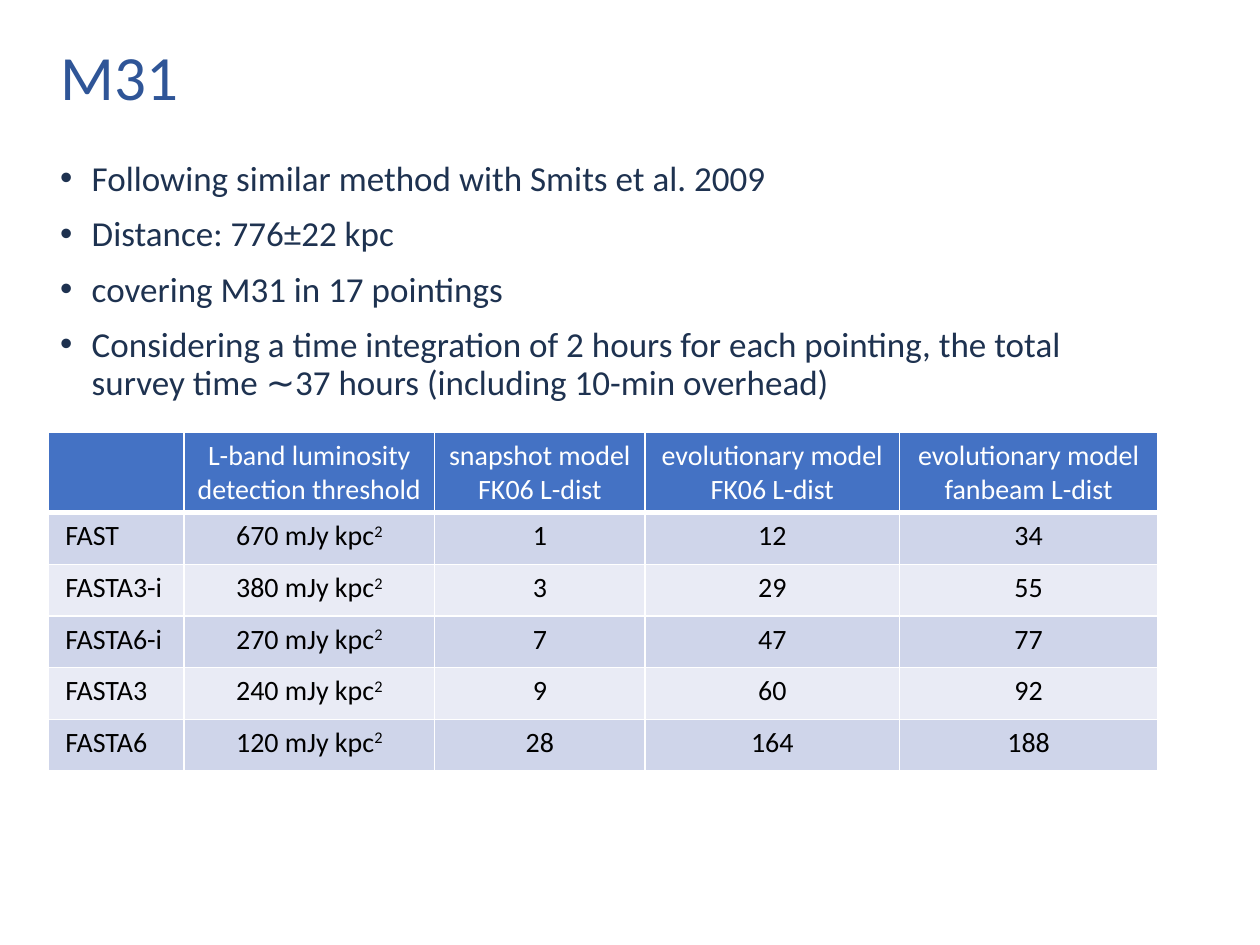
from dataclasses import dataclass

from lxml import etree
from pptx import Presentation
from pptx.dml.color import RGBColor
from pptx.enum.text import MSO_ANCHOR, PP_ALIGN
from pptx.oxml.ns import qn
from pptx.util import Inches, Pt

LEFT, CENTER = PP_ALIGN.LEFT, PP_ALIGN.CENTER
MIDDLE = MSO_ANCHOR.MIDDLE
TITLE_ONLY = 5


@dataclass(frozen=True)
class Theme:
    font: str = "Calibri"
    title: str = "2F5597"
    body: str = "1E3250"
    header_text: str = "FFFFFF"
    cell_text: str = "000000"
    header_fill: str = "4472C4"
    bands: tuple = ("CFD5EA", "E9EBF5")
    border: str = "FFFFFF"
    title_size: int = 36
    body_size: int = 20
    table_size: int = 16


THEME = Theme()

BULLETS = [
    "Following similar method with Smits et al. 2009",
    "Distance: 776±22 kpc",
    "covering M31 in 17 pointings",
    "Considering a time integration of 2 hours for each pointing, the total "
    "survey time ∼37 hours (including 10-min overhead)",
]
HEADERS = [
    "",
    "L-band luminosity detection threshold",
    "snapshot model FK06 L-dist",
    "evolutionary model FK06 L-dist",
    "evolutionary model fanbeam L-dist",
]
# Telescope, threshold in mJy kpc², then detections for each model
SURVEYS = [
    ("FAST", 670, 1, 12, 34),
    ("FASTA3-i", 380, 3, 29, 55),
    ("FASTA6-i", 270, 7, 47, 77),
    ("FASTA3", 240, 9, 60, 92),
    ("FASTA6", 120, 28, 164, 188),
]
COLUMN_WIDTHS = [1.08, 1.99, 1.67, 2.02, 2.05]
HEADER_HEIGHT, ROW_HEIGHT = 0.64, 0.41


def format_runs(paragraph, size, color):
    for run in paragraph.runs:
        run.font.name = THEME.font
        run.font.size = Pt(size)
        run.font.color.rgb = RGBColor.from_string(color)


def place(shape, box):
    shape.left, shape.top, shape.width, shape.height = map(Inches, box)


def add_title(slide, box, text):
    title = slide.shapes.title
    place(title, box)
    frame = title.text_frame
    frame.text = text
    frame.vertical_anchor = MIDDLE
    paragraph = frame.paragraphs[0]
    paragraph.alignment = LEFT
    paragraph.line_spacing = 0.9
    format_runs(paragraph, THEME.title_size, THEME.title)


def add_bullet(paragraph):
    properties = paragraph._p.get_or_add_pPr()
    properties.set("marL", str(Inches(0.25)))
    properties.set("indent", str(Inches(-0.25)))
    etree.SubElement(properties, qn("a:buFont")).set("typeface", "Arial")
    etree.SubElement(properties, qn("a:buChar")).set("char", "•")


def add_bullet_list(slide, box, items):
    frame = slide.shapes.add_textbox(*map(Inches, box)).text_frame
    frame.word_wrap = True
    for index, item in enumerate(items):
        paragraph = frame.add_paragraph() if index else frame.paragraphs[0]
        paragraph.text = item
        add_bullet(paragraph)
        paragraph.line_spacing = 0.9
        paragraph.space_before = Pt(10 if index else 0)
        format_runs(paragraph, THEME.body_size, THEME.body)


def set_borders(cell, top=1, bottom=1):
    properties = cell._tc.get_or_add_tcPr()
    for side, width in (("L", 1), ("R", 1), ("T", top), ("B", bottom)):
        line = etree.SubElement(properties, qn(f"a:ln{side}"), w=str(Pt(width)))
        fill = etree.SubElement(line, qn("a:solidFill"))
        etree.SubElement(fill, qn("a:srgbClr"), val=THEME.border)


def fill_cell(cell, text, fill, color, alignment=CENTER, superscript=""):
    cell.fill.solid()
    cell.fill.fore_color.rgb = RGBColor.from_string(fill)
    paragraph = cell.text_frame.paragraphs[0]
    paragraph.text = text
    paragraph.alignment = alignment
    if superscript:
        run = paragraph.add_run()
        run.text = superscript
        run._r.get_or_add_rPr().set("baseline", "30000")
    format_runs(paragraph, THEME.table_size, color)


def add_survey_table(slide, box):
    table = slide.shapes.add_table(
        len(SURVEYS) + 1, len(HEADERS), *map(Inches, box)
    ).table
    for column, width in zip(table.columns, COLUMN_WIDTHS):
        column.width = Inches(width)
    for index, row in enumerate(table.rows):
        row.height = Inches(ROW_HEIGHT if index else HEADER_HEIGHT)

    for column, header in enumerate(HEADERS):
        cell = table.cell(0, column)
        set_borders(cell, bottom=3)
        fill_cell(cell, header, THEME.header_fill, THEME.header_text)

    for row, (name, threshold, *counts) in enumerate(SURVEYS, start=1):
        texts = [name, f"{threshold} mJy kpc", *map(str, counts)]
        for column, text in enumerate(texts):
            cell = table.cell(row, column)
            set_borders(cell, top=3 if row == 1 else 1)
            if column == 0:
                cell.margin_left = Inches(0.14)
            fill_cell(
                cell, text, THEME.bands[(row - 1) % 2], THEME.cell_text,
                alignment=CENTER if column else LEFT,
                superscript="2" if column == 1 else "",
            )


def main():
    presentation = Presentation()
    presentation.slide_width = Inches(10)
    presentation.slide_height = Inches(7.5)
    slide = presentation.slides.add_slide(presentation.slide_layouts[TITLE_ONLY])
    add_title(slide, (0.38, 0.22, 9.23, 0.83), "M31")
    add_bullet_list(slide, (0.38, 1.23, 8.93, 2.07), BULLETS)
    table_height = HEADER_HEIGHT + ROW_HEIGHT * len(SURVEYS)
    add_survey_table(slide, (0.38, 3.43, sum(COLUMN_WIDTHS), table_height))
    presentation.save("out.pptx")


if __name__ == "__main__":
    main()
